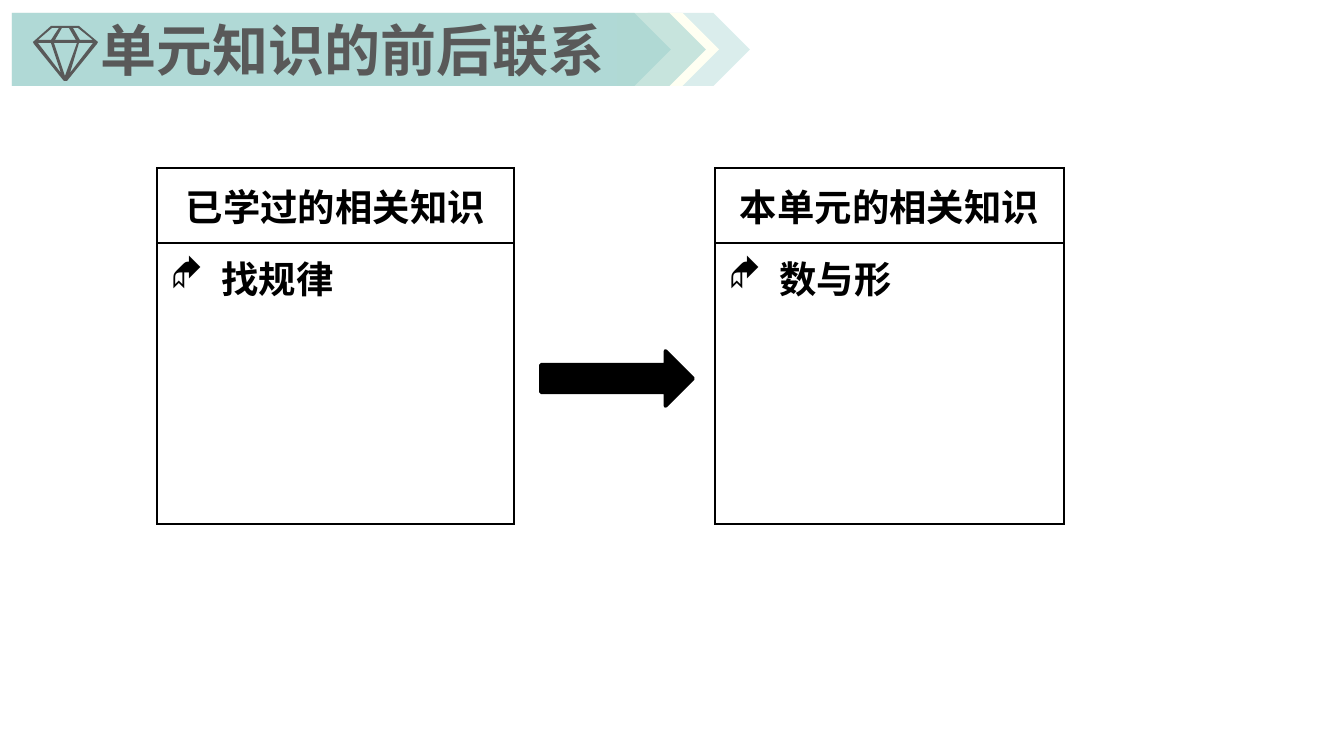
from dataclasses import dataclass

from lxml import etree
from pptx import Presentation
from pptx import util as u
from pptx.dml.color import RGBColor
from pptx.enum import shapes, text
from pptx.oxml.ns import qn

PX = 914400 / 134.4
FONT = "Noto Sans CJK SC"
BULLET_FONT = "Wingdings"
BLACK, GREY, TEAL, CREAM = "000000", "595959", "A1D2CF", "FFFFF2"


@dataclass
class Plate:
    left: int
    width: int
    fill: str
    alpha: int = 100


@dataclass
class Card:
    left: int
    width: int
    heading: str
    item: str


PLATES = [
    Plate(648, 102, TEAL, 39),
    Plate(617, 102, CREAM),
    Plate(12, 659, TEAL, 59),
    Plate(12, 694, TEAL, 59),
]
CARDS = [
    Card(157, 357, "已学过的相关知识", "找规律"),
    Card(715, 349, "本单元的相关知识", "数与形"),
]
CARD_TOP, ROW_HEIGHTS = 168, (75, 281)

# Outer edge of the gem, then its facets
GEM = [
    [(33, 42), (51, 26), (79, 26), (98, 42), (97, 44), (67, 81), (64, 81), (34, 44)],
    [(70, 73), (79, 43), (93, 43)],
    [(65, 76), (54, 43), (77, 43)],
    [(38, 43), (51, 43), (61, 73)],
    [(52, 28), (59, 28), (51, 40), (38, 40)],
    [(69, 28), (76, 40), (55, 40), (62, 28)],
    [(78, 28), (93, 40), (80, 40), (73, 28)],
]


def px(n: int) -> int:
    return round(n * PX)


def rgb(value: str) -> RGBColor:
    return RGBColor.from_string(value)


def paint(sp, color: str, alpha: int = 100) -> None:
    sp.shadow.inherit = False
    sp.fill.solid()
    sp.fill.fore_color.rgb = rgb(color)
    sp.line.fill.background()
    if alpha < 100:
        clr = sp.fill._xPr.find(".//" + qn("a:srgbClr"))
        etree.SubElement(clr, qn("a:alpha"), val=str(alpha * 1000))


def write(p, words: str, size: int, color: str) -> None:
    r = p.add_run()
    r.text = words
    for name, value in {"size": u.Pt(size), "bold": True, "name": FONT}.items():
        setattr(r.font, name, value)
    r.font.color.rgb = rgb(color)
    etree.SubElement(r._r.get_or_add_rPr(), qn("a:ea"), typeface=FONT)


def add_bullet(p, char: str, indent: int) -> None:
    pPr = p._p.get_or_add_pPr()
    pPr.set("marL", str(px(indent)))
    pPr.set("indent", str(-px(indent)))
    etree.SubElement(pPr, qn("a:buFont"), typeface=BULLET_FONT)
    etree.SubElement(pPr, qn("a:buChar"), char=char)


def add_borders(cell, color: str, width: int) -> None:
    tcPr = cell._tc.get_or_add_tcPr()
    for side in ("lnL", "lnR", "lnT", "lnB"):
        ln = etree.SubElement(tcPr, qn(f"a:{side}"), w=str(u.Pt(width)))
        fill = etree.SubElement(ln, qn("a:solidFill"))
        etree.SubElement(fill, qn("a:srgbClr"), val=color)


def add_card(s, card: Card) -> None:
    frame = s.shapes.add_table(2, 1, px(card.left), px(CARD_TOP),
                               px(card.width), px(sum(ROW_HEIGHTS)))
    table = frame.table
    table.first_row = table.horz_banding = False
    table.columns[0].width = px(card.width)
    for i, (height, words) in enumerate(zip(ROW_HEIGHTS, (card.heading, card.item))):
        table.rows[i].height = px(height)
        cell = table.cell(i, 0)
        add_borders(cell, BLACK, 1)
        cell.fill.background()
        p = cell.text_frame.paragraphs[0]
        if i == 0:
            cell.vertical_anchor = text.MSO_ANCHOR.MIDDLE
            p.alignment = text.PP_ALIGN.CENTER
        else:
            add_bullet(p, "◆", 51)
        write(p, words, 20, BLACK)


def add_plate(group, plate: Plate) -> None:
    sp = group.shapes.add_shape(shapes.MSO_SHAPE.PENTAGON, px(plate.left), px(13),
                                px(plate.width), px(73))
    paint(sp, plate.fill, plate.alpha)


def add_gem(s) -> None:
    builder = s.shapes.build_freeform(*GEM[0][0], scale=PX)
    builder.add_line_segments(GEM[0][1:], close=True)
    for facet in GEM[1:]:
        builder.move_to(*facet[0])
        builder.add_line_segments(facet[1:], close=True)
    paint(builder.convert_to_shape(), GREY)


def main() -> None:
    prs = Presentation()
    prs.slide_width, prs.slide_height = px(1344), px(756)
    s = prs.slides.add_slide(prs.slide_layouts[6])

    # Knowledge cards and the arrow between them
    add_card(s, CARDS[0])
    arrow = s.shapes.add_shape(shapes.MSO_SHAPE.RIGHT_ARROW, px(541), px(351), px(152), px(55))
    paint(arrow, BLACK)
    arrow.line.color.rgb = rgb(BLACK)
    arrow.line.width = u.Pt(2)
    add_card(s, CARDS[1])

    # Title banner
    banner = s.shapes.add_group_shape()
    for plate in PLATES:
        add_plate(banner, plate)
    title = banner.shapes.add_textbox(px(87), px(9), px(622), px(81))
    tf = title.text_frame
    tf.word_wrap = True
    tf.auto_size = text.MSO_AUTO_SIZE.SHAPE_TO_FIT_TEXT
    write(tf.paragraphs[0], "单元知识的前后联系", 30, GREY)
    add_gem(s)

    prs.save("out.pptx")


if __name__ == "__main__":
    main()
